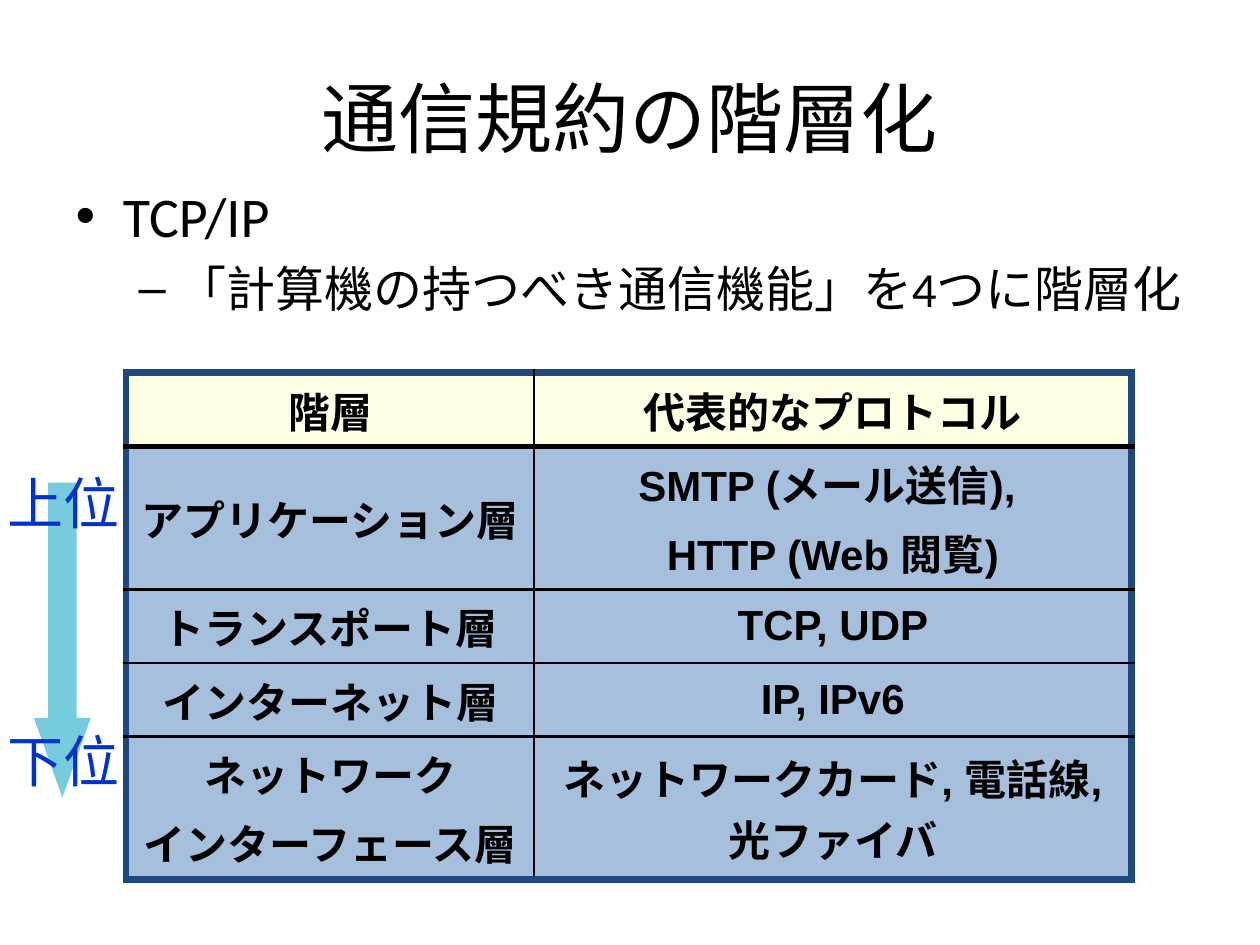
from lxml.etree import SubElement
from pptx import Presentation
from pptx.dml.color import RGBColor
from pptx.enum.shapes import MSO_SHAPE
from pptx.enum.text import MSO_ANCHOR, MSO_AUTO_SIZE, PP_ALIGN
from pptx.oxml.ns import qn
from pptx.util import Inches, Pt

BLACK = RGBColor(0x00, 0x00, 0x00)
NAVY = RGBColor(0x1F, 0x49, 0x7D)
BLUE = RGBColor(0x4F, 0x81, 0xBD)
CREAM = RGBColor(0xFF, 0xFF, 0xCC)
AQUA = RGBColor(0x77, 0xCB, 0xDF)
LABEL_BLUE = RGBColor(0x00, 0x33, 0xCC)

LAYERS = [
    ("階層", "代表的なプロトコル"),
    ("アプリケーション層", "SMTP (メール送信), \nHTTP (Web 閲覧)"),
    ("トランスポート層", "TCP, UDP"),
    ("インターネット層", "IP, IPv6"),
    ("ネットワーク\nインターフェース層", "ネットワークカード, 電話線, 光ファイバ"),
]
COLUMN_WIDTHS = (3.24, 4.74)
ROW_HEIGHTS = (0.4, 0.6, 0.48, 0.48, 0.2)  # minimum heights; rows grow with their text

OUTER = (NAVY, 4.5)
INNER = (BLACK, 1.5)
HEADER_RULE = (BLACK, 3)


def format_runs(paragraph, font_name, size, color, bold=None):
    for run in paragraph.runs:
        run.font.name = font_name
        run.font.size = Pt(size)
        run.font.color.rgb = color
        run.font.bold = bold


def place(shape, left, top, width, height):
    shape.left, shape.top = Inches(left), Inches(top)
    shape.width, shape.height = Inches(width), Inches(height)


def fill_title(slide, left, top, width, height):
    title = slide.shapes.title
    place(title, left, top, width, height)
    title.text_frame.text = "通信規約の階層化"
    format_runs(title.text_frame.paragraphs[0], "Calibri", 44, BLACK)


def fill_body(slide, left, top, width, height):
    body = slide.placeholders[1]
    place(body, left, top, width, height)
    body.text_frame.text = "TCP/IP\n「計算機の持つべき通信機能」を4つに階層化"
    for level, (paragraph, size) in enumerate(zip(body.text_frame.paragraphs, (32, 28))):
        paragraph.level = level
        format_runs(paragraph, "Calibri", size, BLACK)


def set_border(cell, side, color, width):
    line = SubElement(cell._tc.get_or_add_tcPr(), qn(f"a:ln{side}"), w=str(Pt(width)))
    SubElement(SubElement(line, qn("a:solidFill")), qn("a:srgbClr"), val=str(color))


def set_translucent_fill(cell, color):
    cell.fill.solid()
    cell.fill.fore_color.rgb = color
    color_element = cell._tc.tcPr.find(qn("a:solidFill")).find(qn("a:srgbClr"))
    SubElement(color_element, qn("a:alpha"), val="50000")


def set_cell_text(cell, text):
    cell.text_frame.text = text
    cell.vertical_anchor = MSO_ANCHOR.MIDDLE
    for paragraph in cell.text_frame.paragraphs:
        paragraph.alignment = PP_ALIGN.CENTER
        spacing = SubElement(paragraph._p.get_or_add_pPr(), qn("a:spcBef"))
        SubElement(spacing, qn("a:spcPct"), val="20000")
        format_runs(paragraph, "Arial", 24, BLACK, bold=True)


def add_layer_table(slide, left, top, width, height):
    last_row, last_column = len(LAYERS) - 1, len(COLUMN_WIDTHS) - 1
    frame = slide.shapes.add_table(
        len(LAYERS), len(COLUMN_WIDTHS),
        Inches(left), Inches(top), Inches(width), Inches(height))
    table = frame.table
    table.first_row = table.horz_banding = False
    for column, column_width in zip(table.columns, COLUMN_WIDTHS):
        column.width = Inches(column_width)
    for row, row_height in zip(table.rows, ROW_HEIGHTS):
        row.height = Inches(row_height)
    place(frame, left, top, width, height)

    # Rules above and below each row, from the top edge to the bottom edge
    rules = [OUTER, HEADER_RULE] + [INNER] * (last_row - 1) + [OUTER]
    for r, texts in enumerate(LAYERS):
        for c, text in enumerate(texts):
            cell = table.cell(r, c)
            set_cell_text(cell, text)
            set_border(cell, "L", *(OUTER if c == 0 else INNER))
            set_border(cell, "R", *(OUTER if c == last_column else INNER))
            set_border(cell, "T", *rules[r])
            set_border(cell, "B", *rules[r + 1])
            set_translucent_fill(cell, CREAM if r == 0 else BLUE)


def add_level_arrow(slide, left, top, width, height):
    """Arrow from the upper to the lower layers, labelled at both ends."""
    group = slide.shapes.add_group_shape()
    arrow_width, arrow_height, label_height = 0.45, 2.5, 0.63
    arrow = group.shapes.add_shape(
        MSO_SHAPE.DOWN_ARROW, Inches(left + 0.31), Inches(top + 0.16),
        Inches(arrow_width), Inches(arrow_height))
    arrow.adjustments[0] = 0.5
    arrow.adjustments[1] = 1.4
    arrow.shadow.inherit = False
    arrow.fill.solid()
    arrow.fill.fore_color.rgb = AQUA
    arrow.line.fill.background()

    for text, label_top in (("上位", top), ("下位", top + height - label_height)):
        label = group.shapes.add_textbox(
            Inches(left), Inches(label_top), Inches(width), Inches(label_height))
        label.text_frame.text = text
        label.text_frame.word_wrap = False
        label.text_frame.auto_size = MSO_AUTO_SIZE.SHAPE_TO_FIT_TEXT
        format_runs(label.text_frame.paragraphs[0], "Open Sans", 32, LABEL_BLUE)


def main():
    presentation = Presentation()
    presentation.slide_width, presentation.slide_height = Inches(10), Inches(7.5)
    slide = presentation.slides.add_slide(presentation.slide_layouts[1])
    fill_title(slide, 0.5, 0.3, 9, 1.25)
    fill_body(slide, 0.5, 1.39, 9, 5.31)
    add_layer_table(slide, 1, 2.96, 7.99, 3.46)
    add_level_arrow(slide, -0.04, 3.67, 1.09, 2.68)
    presentation.save("out.pptx")


if __name__ == "__main__":
    main()
